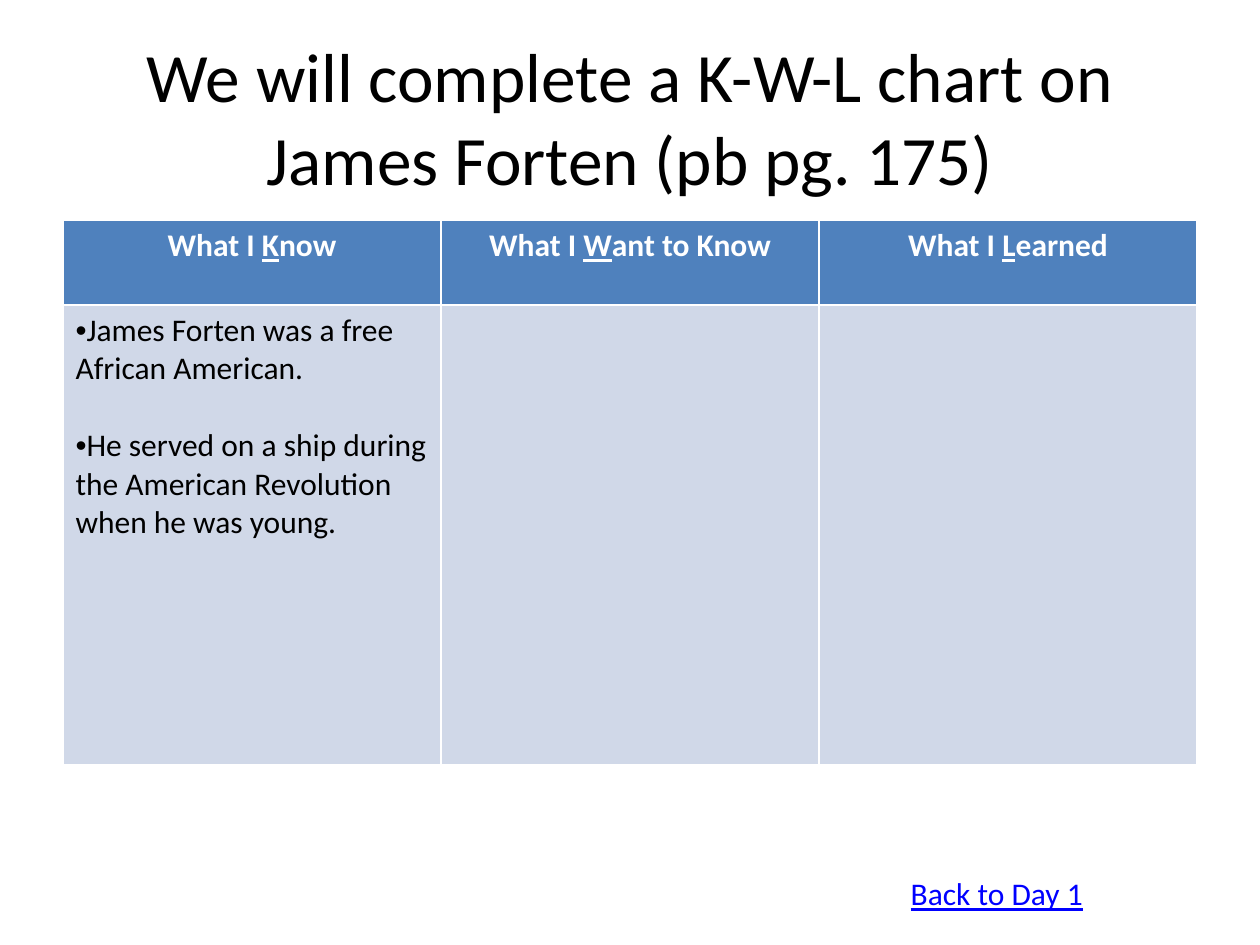
from lxml import etree
from pptx import Presentation
from pptx import util as u
from pptx.dml.color import RGBColor
from pptx.enum import text
from pptx.oxml.ns import qn

WIDTH, HEIGHT = u.Inches(10), u.Inches(7.5)
MARGIN = int(WIDTH * 0.05)
COLUMN = (WIDTH - 2 * MARGIN) // 3


def color(hex_value):
    return RGBColor.from_string(hex_value)


def add_run(paragraph, words, hex_value, **formats):
    run = paragraph.add_run()
    run.text = words
    run.font.color.rgb = color(hex_value)
    for attribute, value in ({"name": "Calibri", "size": u.Pt(18)} | formats).items():
        setattr(run.font, attribute, value)


prs = Presentation()
prs.slide_width, prs.slide_height = WIDTH, HEIGHT
slide = prs.slides.add_slide(prs.slide_layouts[5])

# Title
heading = slide.shapes.title
heading.left, heading.top = MARGIN, int(HEIGHT * 0.04)
heading.width, heading.height = 3 * COLUMN, u.Inches(1.25)
frame = heading.text_frame
frame.auto_size = text.MSO_AUTO_SIZE.NONE
frame.vertical_anchor = text.MSO_ANCHOR.MIDDLE
frame.paragraphs[0].alignment = text.PP_ALIGN.CENTER
add_run(frame.paragraphs[0], "We will complete a K-W-L chart on James Forten (pb pg. 175)",
        "000000", size=u.Pt(39.6))

# K-W-L chart: a heading row above one tall row of answers
row_heights = [u.Inches(0.67), u.Inches(3.65)]
kwl = slide.shapes.add_table(2, 3, MARGIN, u.Inches(1.75), 3 * COLUMN, sum(row_heights)).table
for row, height, fill in zip(kwl.rows, row_heights, ["4F81BD", "D0D8E8"]):
    row.height = height
    for cell in row.cells:
        cell.fill.solid()
        cell.fill.fore_color.rgb = color(fill)

headings = [("K", "now"), ("W", "ant to Know"), ("L", "earned")]
for cell, (initial, rest) in zip(kwl.rows[0].cells, headings):
    paragraph = cell.text_frame.paragraphs[0]
    paragraph.alignment = text.PP_ALIGN.CENTER
    for words, underline in [("What I ", False), (initial, True), (rest, False)]:
        add_run(paragraph, words, "FFFFFF", bold=True, underline=underline)

known_facts = [
    "James Forten was a free African American.",
    "He served on a ship during the American Revolution when he was young.",
]
known = kwl.cell(1, 0).text_frame
for index, fact in enumerate(known_facts):
    paragraph = known.add_paragraph() if index else known.paragraphs[0]
    paragraph.space_before = u.Pt(22 * index)
    add_run(paragraph, fact, "000000", bold=False)
    properties = paragraph._p.get_or_add_pPr()
    etree.SubElement(properties, qn("a:buFont"), typeface="Arial")
    etree.SubElement(properties, qn("a:buChar"), char="•")

# Way back to the first day
back = slide.shapes.add_textbox(u.Inches(7.13), u.Inches(6.89), u.Inches(1.77), u.Inches(0.4))
back.text_frame.word_wrap = False
back.text_frame.auto_size = text.MSO_AUTO_SIZE.SHAPE_TO_FIT_TEXT
add_run(back.text_frame.paragraphs[0], "Back to Day 1", "0000FF", underline=True)

prs.save("out.pptx")
